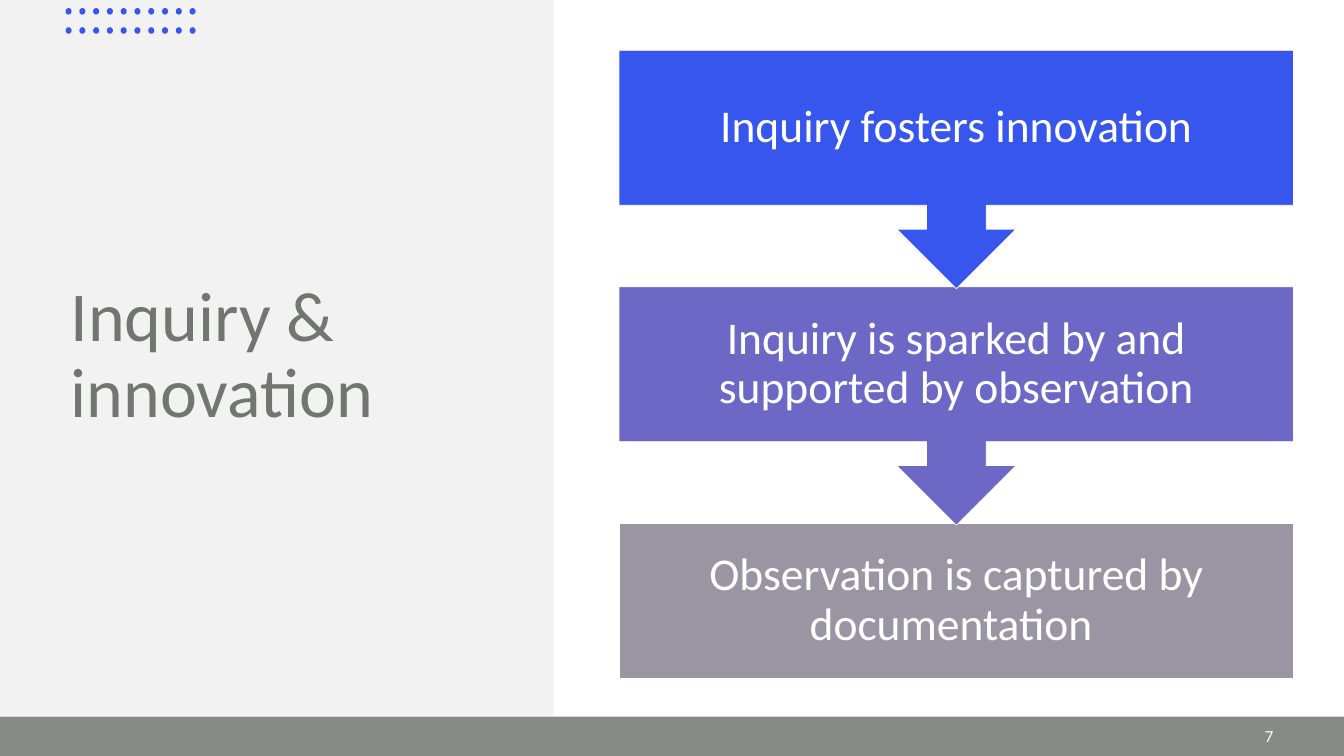
import pptx
import pptx.util
import pptx.dml.color
import pptx.enum.shapes
import pptx.enum.text

Inches = pptx.util.Inches
SHAPE = pptx.enum.shapes.MSO_SHAPE
ALIGN = pptx.enum.text.PP_ALIGN

COLORS = {
    "panel": "F2F2F2",
    "title": "737572",
    "dot": "3756EE",
    "footer": "888A87",
    "white": "FFFFFF",
    "blue": "3656ED",
    "violet": "6D68C6",
    "gray": "9995A3",
}


def rgb(name):
    return pptx.dml.color.RGBColor.from_string(COLORS[name])


def add_block(shapes, kind, box, fill, outline=None, rotation=0):
    sp = shapes.add_shape(kind, *map(Inches, box))
    sp.shadow.inherit = False
    sp.rotation = rotation
    sp.fill.solid()
    sp.fill.fore_color.rgb = rgb(fill)
    if outline:
        sp.line.color.rgb = rgb(outline)
        sp.line.width = pptx.util.Pt(1)
    else:
        sp.line.fill.background()
    return sp


def add_text(shapes, box, text, size, color, align=ALIGN.LEFT,
             spacing=1.0, margins=(0.1, 0.05)):
    tf = shapes.add_textbox(*map(Inches, box)).text_frame
    side, top = map(Inches, margins)
    frame_format = {
        "word_wrap": True,
        "vertical_anchor": pptx.enum.text.MSO_ANCHOR.MIDDLE,
        "margin_left": side, "margin_right": side,
        "margin_top": top, "margin_bottom": top,
    }
    for name, value in frame_format.items():
        setattr(tf, name, value)
    p = tf.paragraphs[0]
    p.alignment = align
    p.line_spacing = spacing
    r = p.add_run()
    r.text = text
    for name, value in {"name": "Calibri", "size": pptx.util.Pt(size)}.items():
        setattr(r.font, name, value)
    r.font.color.rgb = rgb(color)


def add_dots(s, columns=10, rows=2):
    group = s.shapes.add_group_shape()
    for row in range(rows):
        for column in range(columns):
            box = (1.3 + column * 2.46 / (columns - 1), 0.16 + row * 0.38, 0.12, 0.13)
            add_block(group.shapes, SHAPE.OVAL, box, "dot")


def add_steps(s, steps):
    left, top, width, height = 12.28, 1, 13.38, 3.08
    pitch, callout_height = 4.69, 4.73
    group = s.shapes.add_group_shape()
    # Last step first, so that each arrow tip lies over the box below it
    for i, (text, fill) in reversed(list(enumerate(steps))):
        y = top + i * pitch
        box = (left, y, width, height)
        if i == len(steps) - 1:
            add_block(group.shapes, SHAPE.RECTANGLE, box, fill, "white")
        else:
            add_block(group.shapes, SHAPE.UP_ARROW_CALLOUT,
                      (left, y, width, callout_height), fill, "white", 180)
        add_text(group.shapes, box, text, 65, "white", ALIGN.CENTER, 0.9, (0.51, 0.51))


def main():
    prs = pptx.Presentation()
    prs.slide_width, prs.slide_height = Inches(26.66), Inches(15)
    s = prs.slides.add_slide(prs.slide_layouts[6])

    # Left panel with title and dots
    add_block(s.shapes, SHAPE.RECTANGLE, (0, 0, 10.98, 14.2), "panel")
    add_text(s.shapes, (1.3, 2.64, 8.48, 8.89), "Inquiry & innovation",
             100, "title", spacing=0.9)
    add_dots(s)

    # Footer bar with page number
    add_block(s.shapes, SHAPE.RECTANGLE, (0, 14.22, 26.66, 0.78), "footer")
    add_text(s.shapes, (19.36, 14.2, 6, 0.8), "7", 24, "white", ALIGN.RIGHT)

    # Process steps
    add_steps(s, [
        ("Inquiry fosters innovation", "blue"),
        ("Inquiry is sparked by and supported by observation", "violet"),
        ("Observation is captured by documentation ", "gray"),
    ])
    prs.save("out.pptx")


if __name__ == "__main__":
    main()
